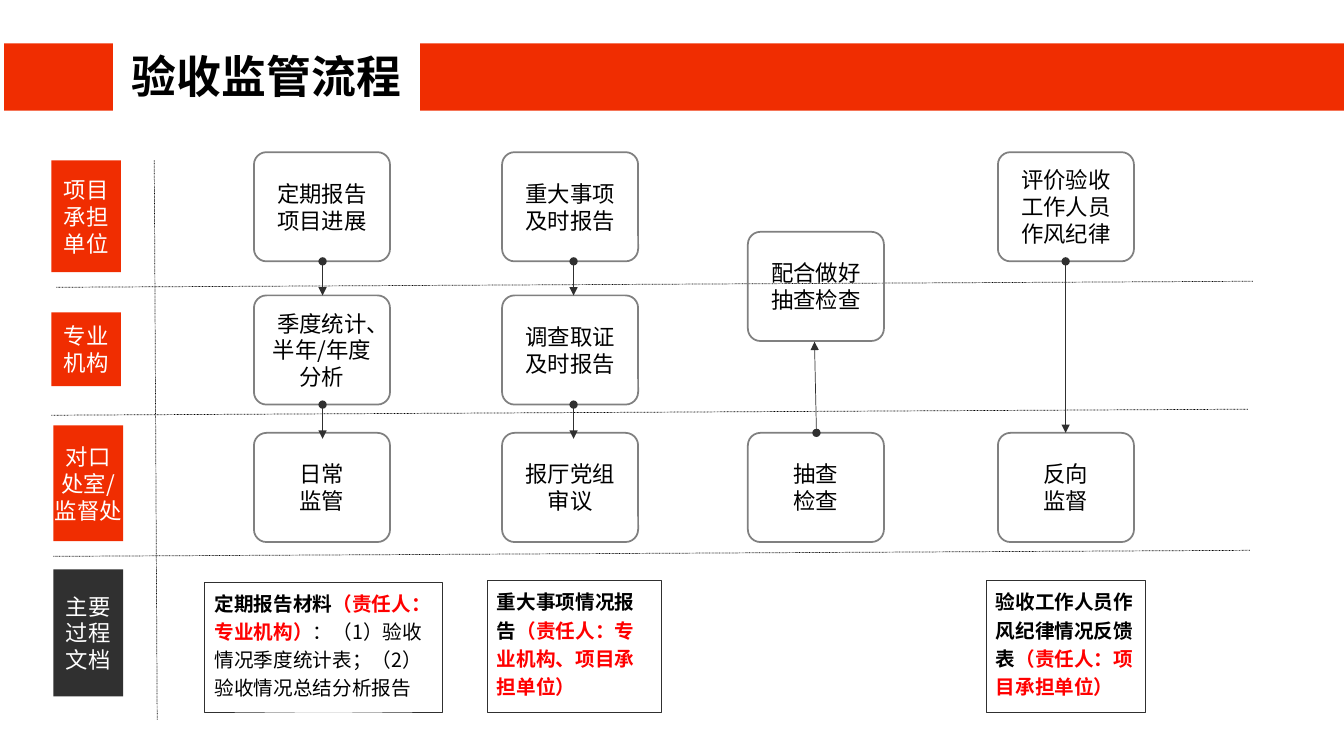
from dataclasses import dataclass
from typing import Optional

from lxml import etree
from pptx import Presentation
from pptx.dml.color import RGBColor
from pptx.enum.dml import MSO_LINE
from pptx.enum.shapes import MSO_CONNECTOR, MSO_SHAPE
from pptx.enum.text import MSO_ANCHOR, PP_ALIGN
from pptx.oxml.ns import qn
from pptx.util import Pt

RECT, ROUNDED = MSO_SHAPE.RECTANGLE, MSO_SHAPE.ROUNDED_RECTANGLE
STRAIGHT, DOTTED = MSO_CONNECTOR.STRAIGHT, MSO_LINE.ROUND_DOT
TOP, MIDDLE = MSO_ANCHOR.TOP, MSO_ANCHOR.MIDDLE
LEFT, CENTER = PP_ALIGN.LEFT, PP_ALIGN.CENTER


@dataclass(frozen=True)
class Theme:
    font: str = "Noto Sans CJK SC"
    accent: RGBColor = RGBColor(0xF0, 0x2D, 0x01)
    dark: RGBColor = RGBColor(0x30, 0x30, 0x30)
    outline: RGBColor = RGBColor(0x80, 0x80, 0x80)
    alert: RGBColor = RGBColor(0xFF, 0x00, 0x00)
    black: RGBColor = RGBColor(0x00, 0x00, 0x00)
    white: RGBColor = RGBColor(0xFF, 0xFF, 0xFF)
    title_size: float = 32
    label_size: float = 16
    document_size: float = 14


THEME = Theme()


@dataclass(frozen=True)
class Span:
    text: str
    size: float
    color: RGBColor
    bold: bool = False


@dataclass(frozen=True)
class Box:
    left: float
    top: float
    width: float
    height: float
    paragraphs: tuple[tuple[Span, ...], ...] = ()
    fill: Optional[RGBColor] = None
    line: Optional[RGBColor] = None
    line_width: float = 0
    preset: MSO_SHAPE = RECT
    align: PP_ALIGN = CENTER
    anchor: MSO_ANCHOR = MIDDLE
    wrap: bool = True
    spacing: float = 1.0
    inset: float = 7.2


@dataclass(frozen=True)
class Link:
    x1: float
    y1: float
    x2: float
    y2: float
    arrow: bool = False


def write_text(frame, box: Box) -> None:
    frame_format = {
        "word_wrap": box.wrap, "vertical_anchor": box.anchor,
        "margin_left": Pt(box.inset), "margin_right": Pt(box.inset),
        "margin_top": Pt(3.6), "margin_bottom": Pt(3.6),
    }
    for name, value in frame_format.items():
        setattr(frame, name, value)
    for index, spans in enumerate(box.paragraphs):
        paragraph = frame.add_paragraph() if index else frame.paragraphs[0]
        paragraph.alignment = box.align
        paragraph.line_spacing = box.spacing
        for span in spans:
            run = paragraph.add_run()
            run.text = span.text
            run.font.color.rgb = span.color
            font_format = {"name": THEME.font, "size": Pt(span.size), "bold": span.bold}
            for name, value in font_format.items():
                setattr(run.font, name, value)
            # East Asian typeface
            etree.SubElement(run.font._element, qn("a:ea"), typeface=THEME.font)


def draw_box(slide, box: Box) -> None:
    shape = slide.shapes.add_shape(
        box.preset, Pt(box.left), Pt(box.top), Pt(box.width), Pt(box.height))
    shape.shadow.inherit = False
    if box.preset == ROUNDED:
        shape.adjustments[0] = 0.115
    if box.fill is None:
        shape.fill.background()
    else:
        shape.fill.solid()
        shape.fill.fore_color.rgb = box.fill
    if box.line is None:
        shape.line.fill.background()
    else:
        shape.line.color.rgb = box.line
        shape.line.width = Pt(box.line_width)
    write_text(shape.text_frame, box)


def draw_link(slide, link: Link) -> None:
    connector = slide.shapes.add_connector(
        STRAIGHT, Pt(link.x1), Pt(link.y1), Pt(link.x2), Pt(link.y2))
    connector.line.color.rgb = THEME.dark if link.arrow else THEME.black
    connector.line.width = Pt(0.5)
    if link.arrow:
        outline = connector.line._get_or_add_ln()
        etree.SubElement(outline, qn("a:headEnd"), type="oval")
        etree.SubElement(outline, qn("a:tailEnd"), type="triangle")
    else:
        connector.line.dash_style = DOTTED
    etree.SubElement(connector._element.spPr, qn("a:effectLst"))


def label_lines(text: str, color: RGBColor) -> tuple[tuple[Span, ...], ...]:
    return tuple((Span(line, THEME.label_size, color),) for line in text.split("\n"))


def lane_label(left: float, top: float, height: float, text: str,
               fill: RGBColor = THEME.accent) -> Box:
    return Box(left, top, 49.7, height, label_lines(text, THEME.white), fill, wrap=False)


def step(left: float, top: float, text: str) -> Box:
    return Box(left, top, 97.2, 78, label_lines(text, THEME.black), line=THEME.outline,
               line_width=1.25, preset=ROUNDED, inset=6.5)


def document(left: float, top: float, width: float, height: float,
             name: str, owner: str, detail: str = "") -> Box:
    size = THEME.document_size
    spans = [Span(name, size, THEME.black, True), Span(owner, size, THEME.alert, True)]
    if detail:
        spans.append(Span(detail, size, THEME.black))
    return Box(left, top, width, height, (tuple(spans),), line=THEME.dark,
               line_width=0.25, align=LEFT, anchor=TOP, spacing=1.2)


# Grid of process columns and lane rows
REPORT, EVENT, CHECK, REVIEW = 181.4, 358.6, 534.2, 712.8
UNIT_ROW, AGENCY_ROW, OFFICE_ROW = 108.7, 211, 309.2
SPOT_ROW = 165.6

TITLE = Box(80.6, 31, 219.6, 46,
            ((Span("验收监管流程", THEME.title_size, THEME.black, True),),), anchor=TOP)
TITLE_BARS = [
    Box(3, 31, 77.6, 48, fill=THEME.accent),
    Box(300.2, 31, 659.8, 48, fill=THEME.accent),
]
LANES = [
    lane_label(36.7, 114.5, 79.9, "项目\n承担\n单位"),
    lane_label(36.7, 223.2, 52.6, "专业\n机构"),
    lane_label(38.2, 303.8, 82.8, "对口\n处室/\n监督处"),
    lane_label(38.2, 406.8, 90.7, "主要\n过程\n文档", THEME.dark),
]
DIVIDERS = [Link(110.2, 114.5, 112.3, 514.1)] + [
    Link(left, top, left + 854.6, top - 4.3)
    for left, top in ((40.3, 205.2), (36.7, 296.6), (38.2, 397.4))
]
STEPS = [
    step(REPORT, UNIT_ROW, "定期报告项目进展"),
    step(REPORT, AGENCY_ROW, "季度统计、\n半年/年度分析"),
    step(REPORT, OFFICE_ROW, "日常\n监管"),
    step(EVENT, UNIT_ROW, "重大事项及时报告"),
    step(EVENT, AGENCY_ROW, "调查取证及时报告"),
    step(EVENT, OFFICE_ROW, "报厅党组\n审议"),
    step(CHECK, SPOT_ROW, "配合做好抽查检查"),
    step(CHECK, OFFICE_ROW, "抽查\n检查"),
    step(REVIEW, UNIT_ROW, "评价验收工作人员作风纪律"),
    step(REVIEW, OFFICE_ROW, "反向\n监督"),
]
DOCUMENTS = [
    document(146.2, 415.6, 169.9, 92.9, "定期报告材料", "（责任人：专业机构）",
             "：（1）验收情况季度统计表；（2）验收情况总结分析报告"),
    document(347.8, 414.7, 124.3, 94.3, "重大事项情况报告",
             "（责任人：专业机构、项目承担单位）"),
    document(704.2, 414.7, 113.8, 94.3, "验收工作人员作风纪律情况反馈表",
             "（责任人：项目承担单位）"),
]
ARROWS = [
    Link(x, row + 78, x, row + 102.4, arrow=True)
    for x in (230.4, 409.7) for row in (UNIT_ROW, AGENCY_ROW)
] + [
    Link(583.2, OFFICE_ROW, 581.8, 244.1, arrow=True),
    Link(761.2, UNIT_ROW + 78, 761.2, OFFICE_ROW, arrow=True),
]


def main() -> None:
    deck = Presentation()
    deck.slide_width, deck.slide_height = Pt(960), Pt(540)
    slide = deck.slides.add_slide(deck.slide_layouts[6])

    # Heading and lane labels
    for box in [*TITLE_BARS, TITLE, *LANES]:
        draw_box(slide, box)
    # Lane dividers
    for divider in DIVIDERS:
        draw_link(slide, divider)
    # Process steps and their documents
    for box in [*STEPS, *DOCUMENTS]:
        draw_box(slide, box)
    # Flow between steps
    for arrow in ARROWS:
        draw_link(slide, arrow)

    deck.save("out.pptx")


if __name__ == "__main__":
    main()
